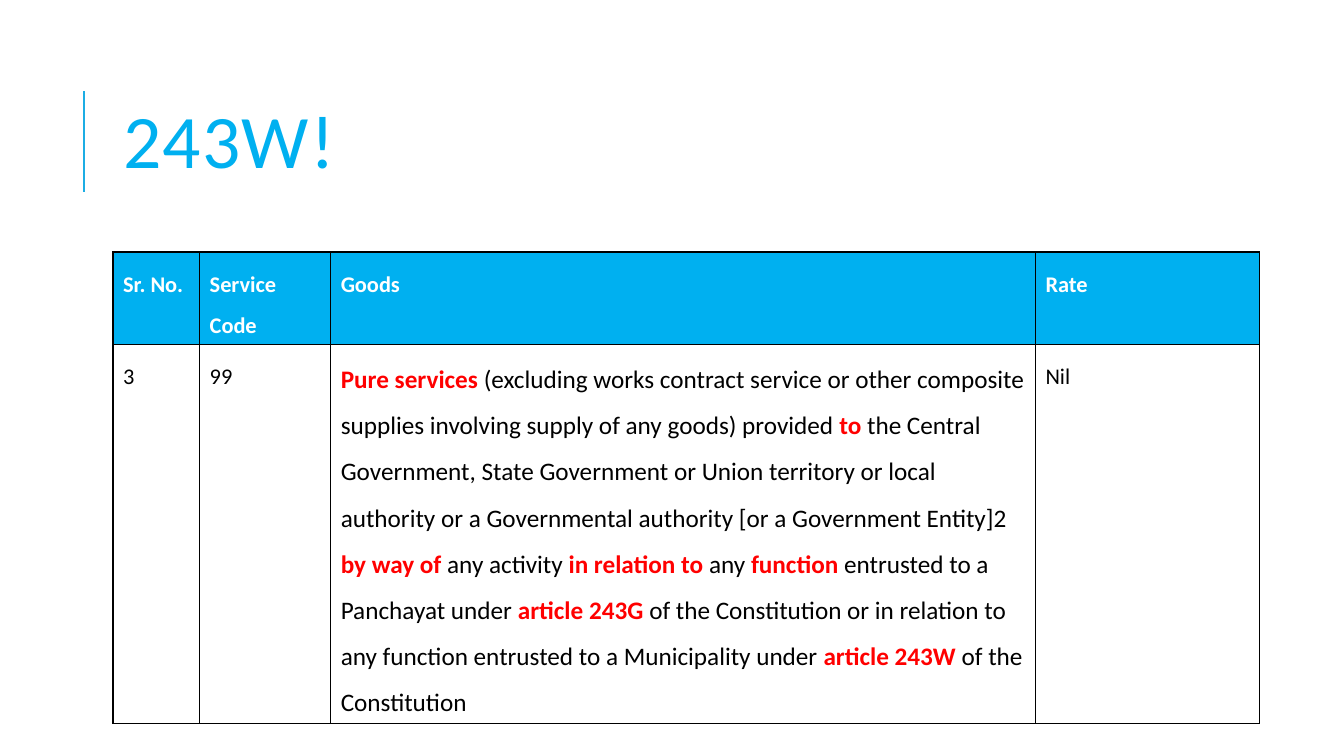
import pptx
import pptx.dml.color
import pptx.enum.shapes
import pptx.enum.text
import pptx.oxml
import pptx.oxml.ns
import pptx.util

COLORS = {
    "accent": "00B0F0",
    "rule": "1CADE4",
    "emphasis": "FF0000",
    "ink": "000000",
    "paper": "FFFFFF",
}
FONT = "Calibri"
SLIDE_WIDTH = pptx.util.Inches(13.33)
SLIDE_HEIGHT = pptx.util.Inches(7.5)
GRID_COLUMNS, GRID_ROWS = 1333, 750
CONTENT_LEFT = 112

COLUMN_WIDTHS = [86, 130, 699, 222]
ROW_HEIGHTS = [74, 359]
HEADINGS = ["Sr. No.", "Service Code", "Goods", "Rate"]
# Phrases between asterisks are emphasised.
EXEMPTION = (
    "*Pure services *(excluding works contract service or other composite "
    "supplies involving supply of any goods) provided *to *the Central "
    "Government, State Government or Union territory or local authority or a "
    "Governmental authority [or a Government Entity]2 *by way of *any activity "
    "*in relation to *any *function *entrusted to a Panchayat under "
    "*article 243G *of the Constitution or in relation to any function "
    "entrusted to a Municipality under *article 243W *of the Constitution"
)
ENTRY = [("3", 16), ("99", 16), (EXEMPTION, 18), ("Nil", 16)]


def across(columns):
    return round(SLIDE_WIDTH * columns / GRID_COLUMNS)


def down(rows):
    return round(SLIDE_HEIGHT * rows / GRID_ROWS)


def rgb(color):
    return pptx.dml.color.RGBColor.from_string(COLORS[color])


def style_paragraph(paragraph, size, spacing):
    paragraph.alignment = pptx.enum.text.PP_ALIGN.LEFT
    paragraph.line_spacing = spacing
    paragraph.font.name = FONT
    paragraph.font.size = pptx.util.Pt(size)


def add_title(slide, text):
    title = slide.shapes.title
    title.left, title.top = across(CONTENT_LEFT), down(64)
    title.width, title.height = across(1063), down(164)
    frame = title.text_frame
    frame.text = text
    frame.word_wrap = True
    frame.auto_size = pptx.enum.text.MSO_AUTO_SIZE.NONE
    frame.vertical_anchor = pptx.enum.text.MSO_ANCHOR.MIDDLE
    heading = frame.paragraphs[0]
    style_paragraph(heading, 54, 0.8)
    heading.font.color.rgb = rgb("accent")
    heading.runs[0].font._element.set("spc", "100")


def add_title_rule(slide):
    rule = slide.shapes.add_connector(
        pptx.enum.shapes.MSO_CONNECTOR.STRAIGHT,
        across(83), down(190), across(83), down(90),
    )
    rule.line.color.rgb = rgb("rule")
    rule.line.width = pptx.util.Pt(1.5)
    rule._element.spPr.append(pptx.oxml.parse_xml(
        f'<a:effectLst {pptx.oxml.ns.nsdecls("a")}/>'))


def add_borders(cell):
    """Draw all four cell edges, placed before the fill as the schema asks."""
    properties = cell._tc.get_or_add_tcPr()
    for position, edge in enumerate(("lnL", "lnR", "lnT", "lnB")):
        properties.insert(position, pptx.oxml.parse_xml(
            f'<a:{edge} {pptx.oxml.ns.nsdecls("a")} w="{pptx.util.Pt(1)}">'
            f'<a:solidFill><a:srgbClr val="{COLORS["ink"]}"/></a:solidFill>'
            f'</a:{edge}>'))


def fill_cell(cell, text, size, color, background=None, bold=False):
    """Write text, turning phrases between asterisks bold and red."""
    if background:
        cell.fill.solid()
        cell.fill.fore_color.rgb = rgb(background)
    else:
        cell.fill.background()
    add_borders(cell)
    paragraph = cell.text_frame.paragraphs[0]
    style_paragraph(paragraph, size, 1.5)
    for index, phrase in enumerate(text.split("*")):
        if phrase:
            emphasised = index % 2 == 1
            run = paragraph.add_run()
            run.text = phrase
            run.font.bold = bold or emphasised
            run.font.color.rgb = rgb("emphasis" if emphasised else color)


def add_rate_table(slide):
    rates = slide.shapes.add_table(
        len(ROW_HEIGHTS), len(COLUMN_WIDTHS), across(CONTENT_LEFT), down(250),
        across(sum(COLUMN_WIDTHS)), down(sum(ROW_HEIGHTS)),
    ).table
    rates.horz_banding = False
    for column, width in zip(rates.columns, COLUMN_WIDTHS):
        column.width = across(width)
    for row, height in zip(rates.rows, ROW_HEIGHTS):
        row.height = down(height)
    for column, heading in enumerate(HEADINGS):
        fill_cell(rates.cell(0, column), heading, 16, "paper", "accent", True)
    for column, (text, size) in enumerate(ENTRY):
        fill_cell(rates.cell(1, column), text, size, "ink")


def main():
    presentation = pptx.Presentation()
    presentation.slide_width = SLIDE_WIDTH
    presentation.slide_height = SLIDE_HEIGHT
    slide = presentation.slides.add_slide(
        presentation.slide_layouts.get_by_name("Title Only"))
    slide.background.fill.solid()
    slide.background.fill.fore_color.rgb = rgb("paper")
    add_title_rule(slide)
    add_title(slide, "243W!")
    add_rate_table(slide)
    presentation.save("out.pptx")


if __name__ == "__main__":
    main()
